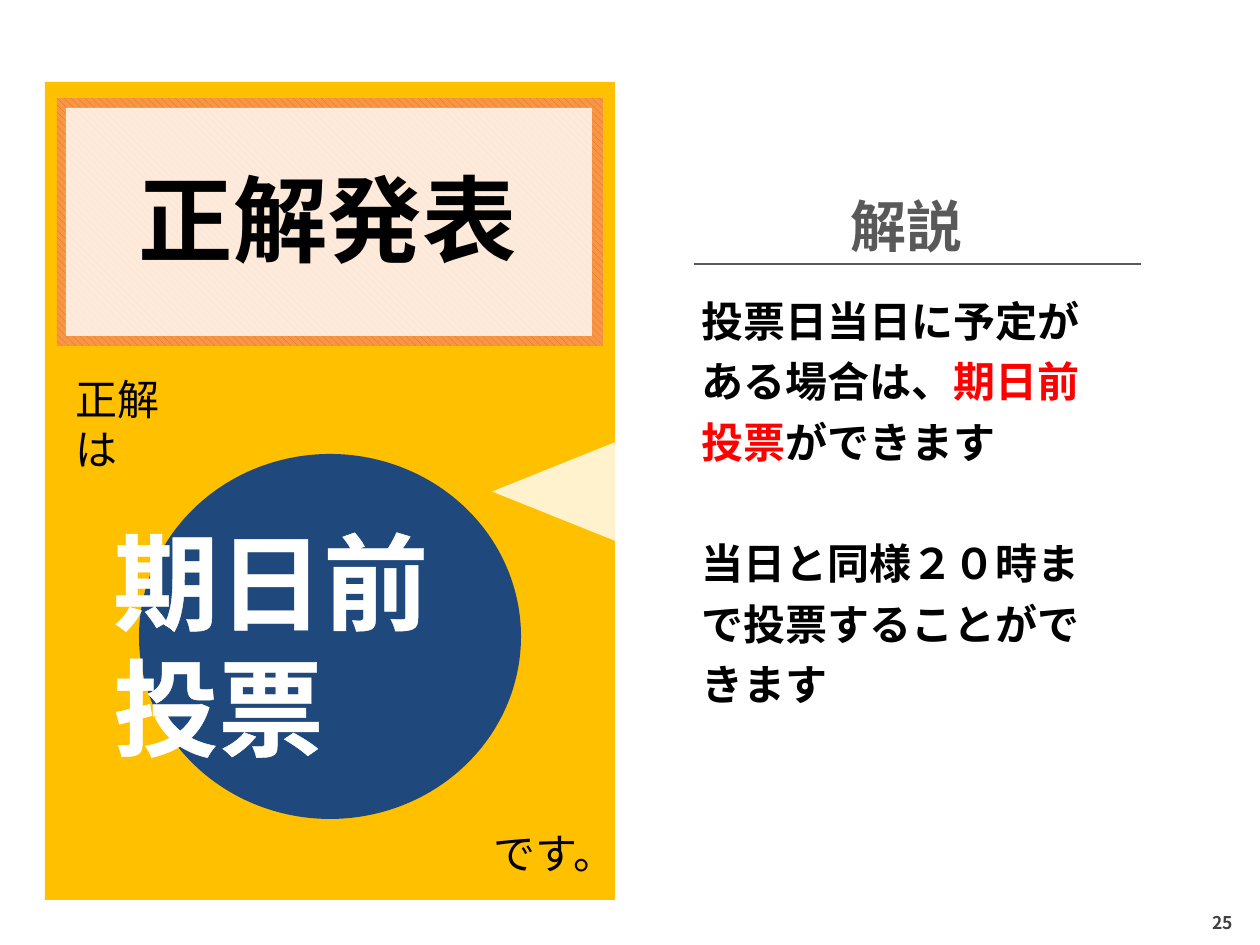
from dataclasses import dataclass
from typing import Optional

import pptx
import pptx.dml.color
import pptx.enum.dml
import pptx.enum.shapes
import pptx.enum.text
import pptx.oxml
import pptx.oxml.ns
import pptx.util

EMU_PER_INCH, PX_PER_INCH = 914400, 126
FONT = "Noto Sans CJK JP"
SHAPE = pptx.enum.shapes.MSO_SHAPE
ALIGN = pptx.enum.text.PP_ALIGN
ANCHOR = pptx.enum.text.MSO_ANCHOR
BLACK, WHITE, GRAY, RED = "000000", "FFFFFF", "595959", "FF0000"
NS = 'xmlns:a="http://schemas.openxmlformats.org/drawingml/2006/main"'


@dataclass(frozen=True)
class Box:
    left: int
    top: int
    width: int
    height: int


@dataclass(frozen=True)
class Run:
    text: str
    color: str = BLACK


@dataclass(frozen=True)
class Label:
    box: Box
    paragraphs: list[list[Run]]
    size: int
    bold: bool = True
    align: Optional[ALIGN] = None
    wrap: bool = True
    line_spacing: Optional[float] = None
    gap: int = 0  # points between paragraphs
    outline: Optional[str] = None


def px(length: int) -> pptx.util.Emu:
    return pptx.util.Emu(round(length * EMU_PER_INCH / PX_PER_INCH))


def place(box: Box) -> list[pptx.util.Emu]:
    return [px(n) for n in (box.left, box.top, box.width, box.height)]


def rgb(color: str) -> pptx.dml.color.RGBColor:
    return pptx.dml.color.RGBColor.from_string(color)


def add_block(slide, kind: SHAPE, box: Box, color: str, opacity: int = 100, rotation: int = 0):
    block = slide.shapes.add_shape(kind, *place(box))
    block.shadow.inherit = False
    block.line.fill.background()
    block.rotation = rotation
    block.fill.solid()
    block.fill.fore_color.rgb = rgb(color)
    if opacity < 100:
        color_node = block.fill._xPr.find(".//" + pptx.oxml.ns.qn("a:srgbClr"))
        color_node.append(pptx.oxml.parse_xml(f'<a:alpha {NS} val="{opacity * 1000}"/>'))
    return block


def add_run(paragraph, run: Run, size: int, bold: bool, outline: Optional[str] = None) -> None:
    piece = paragraph.add_run()
    piece.text = run.text
    font = piece.font
    font.size, font.bold, font.name = pptx.util.Pt(size), bold, FONT
    font.color.rgb = rgb(run.color)
    properties = piece._r.get_or_add_rPr()
    latin = properties.find(pptx.oxml.ns.qn("a:latin"))
    latin.addnext(pptx.oxml.parse_xml(f'<a:ea {NS} typeface="{FONT}"/>'))
    if outline:
        properties.insert(0, pptx.oxml.parse_xml(
            f'<a:ln {NS} w="19050"><a:solidFill><a:srgbClr val="{outline}"/></a:solidFill></a:ln>'))


def add_label(slide, label: Label) -> None:
    frame = slide.shapes.add_textbox(*place(label.box)).text_frame
    frame.word_wrap = label.wrap
    for index, runs in enumerate(label.paragraphs):
        paragraph = frame.add_paragraph() if index else frame.paragraphs[0]
        paragraph.alignment = label.align
        paragraph.line_spacing = label.line_spacing
        if index and label.gap:
            paragraph.space_before = pptx.util.Pt(label.gap)
        for run in runs:
            add_run(paragraph, run, label.size, label.bold, label.outline)


def add_rule(slide, left: int, right: int, y: int, color: str) -> None:
    rule = slide.shapes.add_connector(
        pptx.enum.shapes.MSO_CONNECTOR.STRAIGHT, px(left), px(y), px(right), px(y))
    rule.line.color.rgb = rgb(color)
    rule.line.width = pptx.util.Pt(0.75)
    rule._element.spPr.append(pptx.oxml.parse_xml(f"<a:effectLst {NS}/>"))


def add_page_number(slide, number: str) -> None:
    corner = add_block(slide, SHAPE.RECTANGLE, Box(1186, 900, 74, 44), WHITE)
    frame = corner.text_frame
    frame.word_wrap = False
    frame.vertical_anchor = ANCHOR.MIDDLE
    frame.margin_left = frame.margin_right = frame.margin_top = frame.margin_bottom = px(5)
    frame.paragraphs[0].alignment = ALIGN.CENTER
    add_run(frame.paragraphs[0], Run(number, "404040"), 10, True)


LABELS = [
    Label(Box(124, 155, 407, 127), [[Run("正解発表")]], 54, align=ALIGN.CENTER, wrap=False),
    Label(Box(63, 367, 146, 63), [[Run("正解は")]], 24, bold=False),
    Label(Box(481, 821, 125, 63), [[Run("です。")]], 24, bold=False),
    Label(Box(838, 185, 139, 81), [[Run("解説", GRAY)]], 32, wrap=False),
    Label(Box(689, 279, 443, 379),
          [[Run("投票日当日に予定がある場合は、"), Run("期日前投票", RED), Run("ができます")],
           [Run("当日と同様２０時まで投票することができます")]],
          24, line_spacing=1.2, gap=35),
    Label(Box(101, 511, 460, 267), [[Run("期日前", WHITE)], [Run("投票", WHITE)]],
          60, align=ALIGN.JUSTIFY, outline=WHITE),
]


def main() -> None:
    deck = pptx.Presentation()
    deck.slide_width, deck.slide_height = px(1260), px(945)
    slide = deck.slides.add_slide(deck.slide_layouts[6])

    # Answer panel with its hatched title frame
    add_block(slide, SHAPE.RECTANGLE, Box(45, 82, 570, 818), "FFC000")
    hatch = add_block(slide, SHAPE.RECTANGLE, Box(57, 98, 546, 248), "F79646").fill
    hatch.patterned()
    hatch.pattern = pptx.enum.dml.MSO_PATTERN.WIDE_DOWNWARD_DIAGONAL
    hatch.fore_color.rgb, hatch.back_color.rgb = rgb("E46C0A"), rgb("F79646")
    add_block(slide, SHAPE.RECTANGLE, Box(66, 108, 526, 228), WHITE, opacity=80)

    # Explanation panel with its pointer
    explanation = add_block(slide, SHAPE.ROUNDED_RECTANGLE, Box(638, 82, 578, 818), WHITE, 80)
    explanation.adjustments[0] = 0.06
    add_block(slide, SHAPE.ISOSCELES_TRIANGLE, Box(508, 411, 129, 161), WHITE, 80, 270)

    # Answer circle and the rule under the explanation heading
    add_block(slide, SHAPE.OVAL, Box(139, 454, 382, 365), "1F497D")
    add_rule(slide, 694, 1141, 264, GRAY)

    # Wording
    for label in LABELS:
        add_label(slide, label)
    add_page_number(slide, "25")

    deck.save("out.pptx")


if __name__ == "__main__":
    main()
